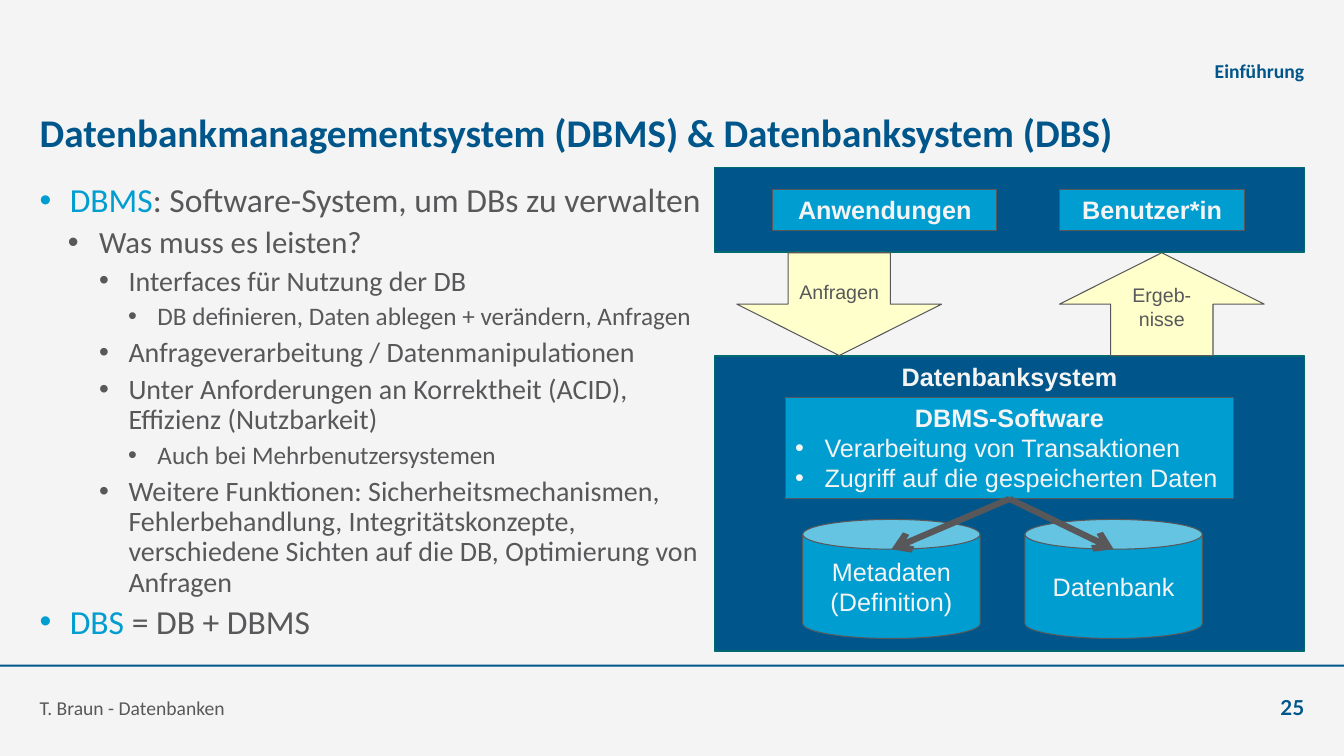
from dataclasses import dataclass

from lxml import etree
from pptx import Presentation
from pptx.dml.color import RGBColor
from pptx.enum.shapes import MSO_CONNECTOR, MSO_SHAPE
from pptx.enum.text import MSO_ANCHOR, MSO_AUTO_SIZE, PP_ALIGN
from pptx.oxml.ns import qn
from pptx.util import Cm, Pt

LEFT, CENTER, RIGHT = PP_ALIGN.LEFT, PP_ALIGN.CENTER, PP_ALIGN.RIGHT
TOP, MIDDLE, BOTTOM = MSO_ANCHOR.TOP, MSO_ANCHOR.MIDDLE, MSO_ANCHOR.BOTTOM
NO_FIT = MSO_AUTO_SIZE.NONE
RECTANGLE, CAN = MSO_SHAPE.RECTANGLE, MSO_SHAPE.CAN
DOWN_ARROW, UP_ARROW = MSO_SHAPE.DOWN_ARROW, MSO_SHAPE.UP_ARROW
STRAIGHT = MSO_CONNECTOR.STRAIGHT

NAVY, CYAN, GREY, PALE = "00568A", "009DD1", "58585A", "F4F4F4"
TEAL, YELLOW = "00696F", "FFFFCC"
TITLE_ONLY = 5

HEADING = {"name": "Calibri", "size": Pt(28), "bold": True, "color": NAVY}
SECTION = {**HEADING, "size": Pt(14)}
FOOTER = {**SECTION, "bold": False, "color": GREY}
NUMBER = {"name": "Lato", "size": Pt(14.7), "bold": True, "color": NAVY}
LABEL = {"name": "Arial", "size": Pt(18), "bold": False, "color": PALE}
LABEL_BOLD = {**LABEL, "bold": True}
ARROW_LABEL = {**LABEL, "size": Pt(14), "color": GREY}

LEVELS = [(24, 0.76, 0.76), (22, 1.5, 0.79), (20, 2.24, 0.74), (18, 2.97, 0.74)]
OUTLINE = [
    (0, "DBMS", ": Software-System, um DBs zu verwalten"),
    (1, "", "Was muss es leisten?"),
    (2, "", "Interfaces für Nutzung der DB"),
    (3, "", "DB definieren, Daten ablegen + verändern, Anfragen"),
    (2, "", "Anfrageverarbeitung / Datenmanipulationen"),
    (2, "", "Unter Anforderungen an Korrektheit (ACID), Effizienz (Nutzbarkeit)"),
    (3, "", "Auch bei Mehrbenutzersystemen"),
    (2, "", "Weitere Funktionen: Sicherheitsmechanismen, Fehlerbehandlung, "
            "Integritätskonzepte, verschiedene Sichten auf die DB, Optimierung von Anfragen"),
    (0, "DBS", " = DB + DBMS"),
]


@dataclass
class Box:
    left: float
    top: float
    width: float
    height: float

    def inner(self, left, top, width, height):
        return Box(self.left + left, self.top + top, width, height)

    def lengths(self):
        return [Cm(value) for value in (self.left, self.top, self.width, self.height)]


def rgb(value):
    return RGBColor.from_string(value)


def apply_format(target, values):
    for name, value in values.items():
        if name == "color":
            target.color.rgb = rgb(value)
        else:
            setattr(target, name, value)


def add_span(para, text, values):
    span = para.add_run()
    span.text = text
    apply_format(span.font, values)


def add_bullet(para, margin, hanging, color):
    properties = para._p.get_or_add_pPr()
    properties.set("marL", str(Cm(margin)))
    properties.set("indent", str(-Cm(hanging)))
    bullet_color = etree.SubElement(properties, qn("a:buClr"))
    etree.SubElement(bullet_color, qn("a:srgbClr"), val=color)
    etree.SubElement(properties, qn("a:buFont"), typeface="Arial")
    etree.SubElement(properties, qn("a:buChar"), char="•")


def prepare_frame(shape, anchor):
    frame = shape.text_frame
    apply_format(frame, {
        "word_wrap": True, "auto_size": NO_FIT, "vertical_anchor": anchor,
        "margin_left": 0, "margin_right": 0, "margin_top": 0, "margin_bottom": 0,
    })
    return frame


def add_caption(page, box, text, values, align=LEFT):
    frame = prepare_frame(page.shapes.add_textbox(*box.lengths()), BOTTOM)
    frame.paragraphs[0].alignment = align
    add_span(frame.paragraphs[0], text, values)


def add_block(page, box, preset, fill, line=GREY, weight=0.75, text="",
              values=LABEL, anchor=MIDDLE):
    shape = page.shapes.add_shape(preset, *box.lengths())
    shape.shadow.inherit = False
    shape.fill.solid()
    shape.fill.fore_color.rgb = rgb(fill)
    shape.line.color.rgb = rgb(line)
    shape.line.width = Pt(weight)
    if text:
        frame = shape.text_frame
        apply_format(frame, {"word_wrap": True, "vertical_anchor": anchor})
        frame.paragraphs[0].alignment = CENTER
        add_span(frame.paragraphs[0], text, values)
    return shape


def add_title(page, box):
    title = page.shapes.title
    title.left, title.top, title.width, title.height = box.lengths()
    para = prepare_frame(title, MIDDLE).paragraphs[0]
    para.alignment = LEFT
    add_span(para, "Datenbankmanagementsystem (DBMS) & Datenbanksystem (DBS)", HEADING)


def add_outline(page, box):
    frame = prepare_frame(page.shapes.add_textbox(*box.lengths()), TOP)
    for index, (level, term, text) in enumerate(OUTLINE):
        para = frame.add_paragraph() if index else frame.paragraphs[0]
        size, margin, hanging = LEVELS[level]
        add_bullet(para, margin, hanging, CYAN if term else GREY)
        apply_format(para, {"level": level, "line_spacing": 0.9,
                            "space_before": Pt(5 if index else 0)})
        values = {"name": "Calibri", "size": Pt(size)}
        if term:
            add_span(para, term, {**values, "color": CYAN})
        add_span(para, text, {**values, "color": GREY})


def add_footer(page, box):
    rule = add_block(page, Box(0, box.top, 33.87, 0.05), RECTANGLE, NAVY)
    rule.line.fill.background()
    add_caption(page, box.inner(0, 0.39, 23.37, 0.99), "T. Braun - Datenbanken", FOOTER)
    add_caption(page, box.inner(box.width - 2, 0.39, 2, 0.99), "25", NUMBER, RIGHT)


def add_users(page, box):
    add_block(page, box, RECTANGLE, NAVY, TEAL, 1)
    for left, width, text in [(1.47, 5.64, "Anwendungen"), (8.69, 4.67, "Benutzer*in")]:
        add_block(page, box.inner(left, 0.56, width, 1.02), RECTANGLE, CYAN,
                  text=text, values=LABEL_BOLD)


def add_exchange(page, box):
    for left, preset, text, anchor in [(0.56, DOWN_ARROW, "Anfragen", MIDDLE),
                                       (8.69, UP_ARROW, "Ergeb-nisse", TOP)]:
        add_block(page, box.inner(left, 0, 5.16, box.height), preset, YELLOW,
                  text=text, values=ARROW_LABEL, anchor=anchor)


def add_access_arrow(page, software, left, top):
    start = software.left + software.width // 2, software.top + software.height
    arrow = page.shapes.add_connector(STRAIGHT, *start, Cm(left), Cm(top))
    arrow.begin_connect(software, 2)
    arrow.line.color.rgb = rgb(GREY)
    arrow.line.width = Pt(4.5)
    etree.SubElement(arrow.line._get_or_add_ln(), qn("a:tailEnd"), type="arrow")
    etree.SubElement(arrow._element.spPr, qn("a:effectLst"))


def add_database_system(page, box):
    add_block(page, box, RECTANGLE, NAVY, TEAL, 1, "Datenbanksystem", LABEL_BOLD, TOP)
    stores = [box.inner(2.22, 4.12, 4.47, 3), box.inner(7.82, 4.12, 4.47, 3)]
    for store, text in zip(stores, ["Metadaten (Definition)", "Datenbank"]):
        add_block(page, store, CAN, CYAN, text=text)
    software = add_block(page, box.inner(1.78, 1.04, 11.3, 2.56), RECTANGLE, CYAN,
                         text="DBMS-Software", values=LABEL_BOLD, anchor=TOP)
    for text in ["Verarbeitung von Transaktionen", "Zugriff auf die gespeicherten Daten"]:
        para = software.text_frame.add_paragraph()
        add_bullet(para, 0.74, 0.74, PALE)
        para.alignment = LEFT
        add_span(para, text, LABEL)
    for store in stores:
        add_access_arrow(page, software, store.left + store.width / 2, store.top + 0.75)


def main():
    deck = Presentation()
    deck.slide_width, deck.slide_height = Cm(33.87), Cm(19.05)
    page = deck.slides.add_slide(deck.slide_layouts[TITLE_ONLY])
    page.background.fill.solid()
    page.background.fill.fore_color.rgb = rgb(PALE)
    add_footer(page, Box(1, 16.75, 31.87, 1.4))
    add_title(page, Box(1, 2.51, 31.87, 1.6))
    add_outline(page, Box(1, 4.62, 16.92, 11.79))
    add_caption(page, Box(9.98, 1.09, 22.89, 0.99), "Einführung", SECTION, RIGHT)
    add_users(page, Box(18.01, 4.22, 14.86, 2.13))
    add_database_system(page, Box(18.01, 8.97, 14.86, 7.44))
    add_exchange(page, Box(18.01, 6.37, 14.86, 2.59))
    deck.save("out.pptx")


if __name__ == "__main__":
    main()
